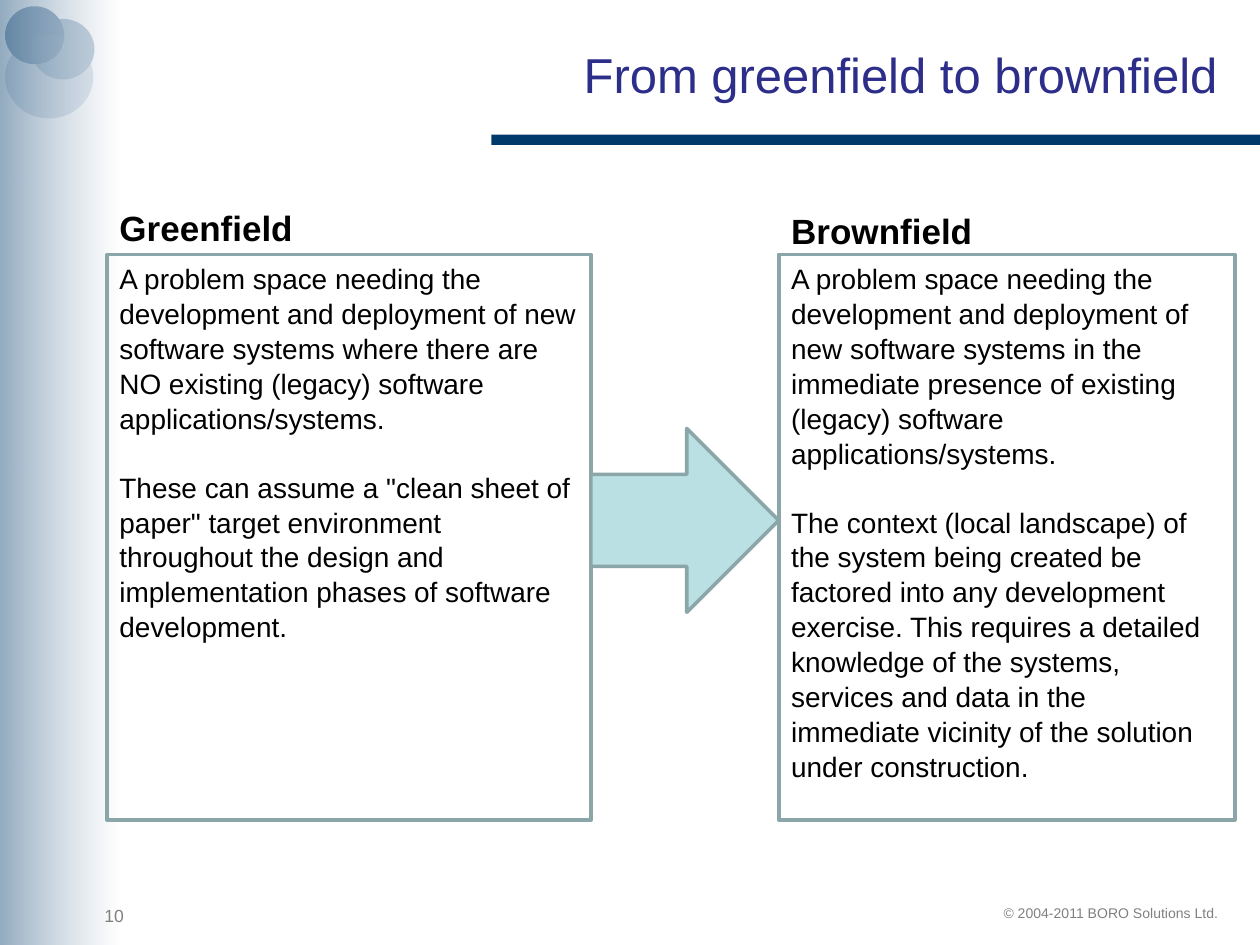
import pptx
import pptx.dml.color
import pptx.enum.shapes
import pptx.enum.text
import pptx.oxml.ns
import pptx.util
from lxml import etree

Pt = pptx.util.Pt
SHAPES = pptx.enum.shapes.MSO_SHAPE
ALIGN = pptx.enum.text.PP_ALIGN
ANCHOR = pptx.enum.text.MSO_ANCHOR

NAVY, WHITE, BLACK, GRAY = "00396B", "FFFFFF", "000000", "808080"
OUTLINE, ARROW_FILL, TITLE_COLOR = "8AA6A8", "BBE0E3", "2D2D8A"

BOX_TOP, BOX_HEIGHT = 145.4, 323.3
LEFT_BOX, LEFT_WIDTH = 61.2, 276.5
RIGHT_BOX, RIGHT_WIDTH = 445, 260.6

GREENFIELD = [
    "A problem space needing the development and deployment of new software "
    "systems where there are NO existing (legacy) software applications/systems.",
    'These can assume a "clean sheet of paper" target environment throughout the '
    "design and implementation phases of software development.",
]
BROWNFIELD = [
    "A problem space needing the development and deployment of new software systems "
    "in the immediate presence of existing (legacy) software applications/systems.",
    "The context (local landscape) of the system being created be factored into any "
    "development exercise. This requires a detailed knowledge of the systems, services "
    "and data in the immediate vicinity of the solution under construction.",
]


def color(value):
    return pptx.dml.color.RGBColor.from_string(value)


def style_shape(shape, fill=None, line=None):
    shape.shadow.inherit = False
    if fill:
        shape.fill.solid()
        shape.fill.fore_color.rgb = color(fill)
    else:
        shape.fill.background()
    if line:
        shape.line.color.rgb = color(line)
        shape.line.width = Pt(2)
    else:
        shape.line.fill.background()


def add_shape(slide, kind, left, top, width, height, fill=None, line=None):
    shape = slide.shapes.add_shape(kind, Pt(left), Pt(top), Pt(width), Pt(height))
    style_shape(shape, fill, line)
    return shape


def set_opacity(shape, percents):
    """Give each fill colour of the shape its opacity."""
    fills = shape.element.spPr.xpath("./a:solidFill/a:srgbClr | ./a:gradFill//a:srgbClr")
    for element, percent in zip(fills, percents):
        alpha = etree.SubElement(element, pptx.oxml.ns.qn("a:alpha"))
        alpha.set("val", str(percent * 1000))


def write_text(shape, paragraphs, size, text_color, bold=False,
               align=ALIGN.LEFT, anchor=ANCHOR.TOP, spacing=1.0, gap=0):
    frame = shape.text_frame
    frame.word_wrap = True
    frame.vertical_anchor = anchor
    for index, text in enumerate(paragraphs):
        paragraph = frame.add_paragraph() if index else frame.paragraphs[0]
        paragraph.text = text
        layout = {"alignment": align, "line_spacing": spacing,
                  "space_before": Pt(gap if index else 0)}
        for name, value in layout.items():
            setattr(paragraph, name, value)
        font = {"name": "Arial", "size": Pt(size), "bold": bold}
        for name, value in font.items():
            setattr(paragraph.font, name, value)
        paragraph.font.color.rgb = color(text_color)


def add_text(slide, text, left, top, width, height, size, text_color, **options):
    box = slide.shapes.add_textbox(Pt(left), Pt(top), Pt(width), Pt(height))
    write_text(box, [text], size, text_color, **options)


def curve_points(start, first, second, end, steps=10):
    """Points along a cubic curve, without its start."""
    for step in range(1, steps + 1):
        t = step / steps
        weights = ((1 - t) ** 3, 3 * t * (1 - t) ** 2, 3 * t * t * (1 - t), t ** 3)
        yield tuple(sum(w * point[axis] for w, point in
                        zip(weights, (start, first, second, end))) for axis in (0, 1))


def add_circles(slide):
    for left, top, width, height, fill in (
        (2.9, 20.2, 50.4, 47.5, "BFCDDC"),
        (18, 10.8, 36, 34.6, "7C9AB5"),
        (2.9, 3.6, 33.8, 33.1, "426B92"),
    ):
        add_shape(slide, SHAPES.OVAL, left, top, width, height, fill)
    # Lens where the circles overlap
    start = position = (18.7, 20.9)
    points = []
    for curve in (
        ((17.3, 24.5), (17.3, 32.4), (19.4, 36)),
        ((21.6, 37.4), (36, 34.6), (36.7, 21.6)),
        ((34.6, 19.4), (24.5, 19.4), start),
    ):
        points += curve_points(position, *curve)
        position = curve[-1]
    builder = slide.shapes.build_freeform(*start, scale=Pt(1))
    builder.add_line_segments(points, close=True)
    style_shape(builder.convert_to_shape(), "4A7297")


def add_side_band(slide):
    band = add_shape(slide, SHAPES.RECTANGLE, 0, 0, 67.7, 540)
    band.fill.gradient()
    band.fill.gradient_angle = 0
    for stop, position, value in zip(band.fill.gradient_stops, (0, 1), (NAVY, WHITE)):
        stop.position = position
        stop.color.rgb = color(value)
    set_opacity(band, (61, 41))
    veil = add_shape(slide, SHAPES.RECTANGLE, 0, 0, 67.7, 540, WHITE)
    set_opacity(veil, (30,))


def add_title(slide, text):
    title = slide.shapes.title
    place = {"left": 52.6, "top": 10.8, "width": 650.2, "height": 62.6}
    for name, value in place.items():
        setattr(title, name, Pt(value))
    write_text(title, [text], 28, TITLE_COLOR, align=ALIGN.RIGHT, anchor=ANCHOR.MIDDLE)


def add_panel(slide, heading, heading_top, paragraphs, left, width):
    add_text(slide, heading, left, heading_top, width, 31.7, 20, BLACK, bold=True)
    box = add_shape(slide, SHAPES.RECTANGLE, left, BOX_TOP, width, BOX_HEIGHT, line=OUTLINE)
    write_text(box, paragraphs, 16, BLACK, spacing=1.04, gap=19.2)


def main():
    presentation = pptx.Presentation()
    presentation.slide_width, presentation.slide_height = Pt(720), Pt(540)
    slide = presentation.slides.add_slide(presentation.slide_layouts[5])

    # Decoration and title
    add_circles(slide)
    add_side_band(slide)
    add_shape(slide, SHAPES.RECTANGLE, 280.8, 77, 439.2, 5.8, NAVY)
    add_title(slide, "From greenfield to brownfield")

    # The two kinds of problem space, with the arrow between them
    add_panel(slide, "Greenfield", 114.5, GREENFIELD, LEFT_BOX, LEFT_WIDTH)
    add_panel(slide, "Brownfield", 115.9, BROWNFIELD, RIGHT_BOX, RIGHT_WIDTH)
    arrow_left = LEFT_BOX + LEFT_WIDTH
    add_shape(slide, SHAPES.RIGHT_ARROW, arrow_left, 244.8,
              RIGHT_BOX - arrow_left, 105.1, ARROW_FILL, OUTLINE)

    # Footer
    add_text(slide, "10", 52.6, 513.4, 137.5, 19.4, 10, GRAY)
    add_text(slide, "© 2004-2011 BORO Solutions Ltd.", 493.2, 513.4, 210.2, 17.3, 8, GRAY,
             align=ALIGN.RIGHT)

    presentation.save("out.pptx")


if __name__ == "__main__":
    main()
